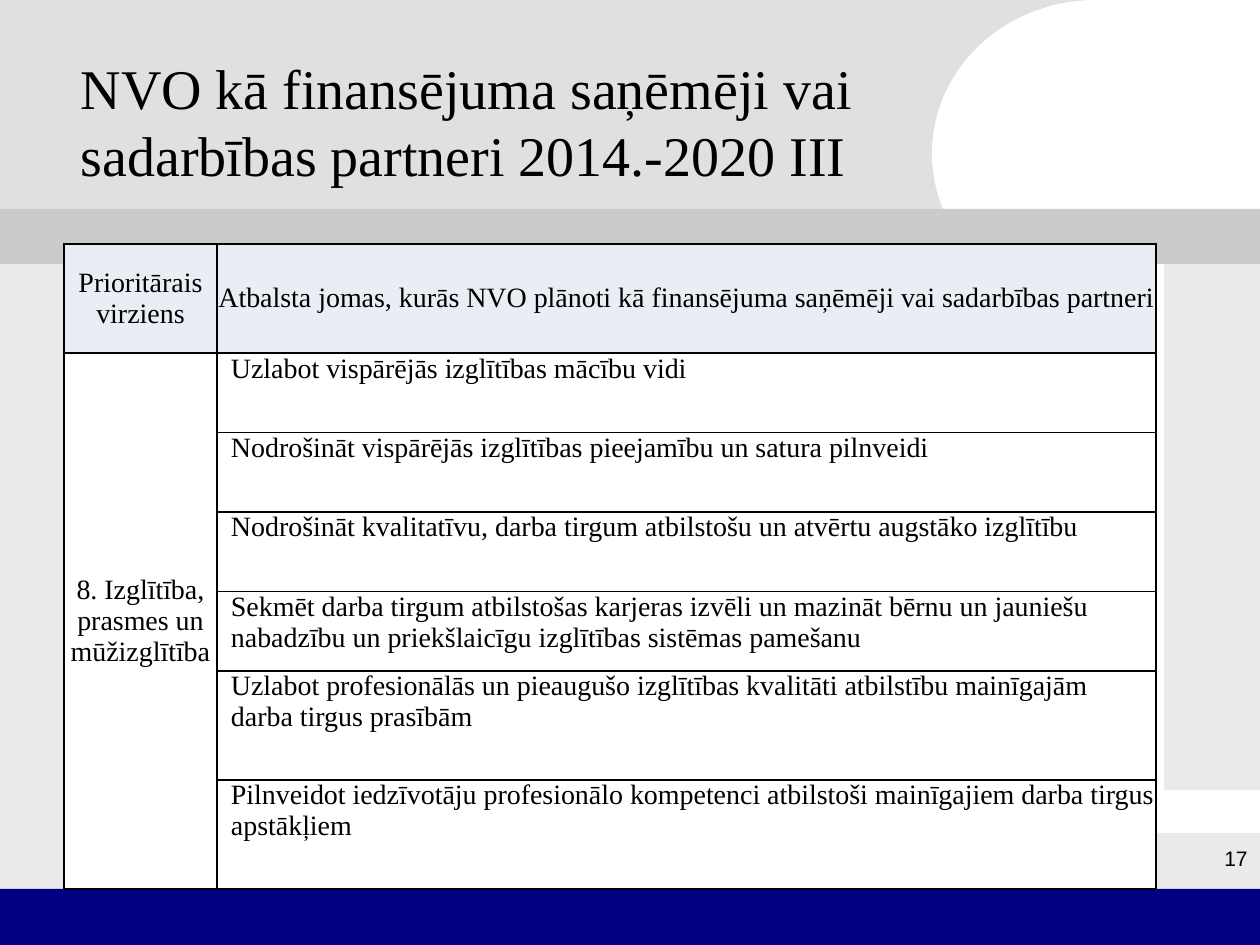
from lxml.etree import SubElement
from pptx import Presentation
from pptx.dml.color import RGBColor
from pptx.enum.shapes import MSO_SHAPE as Shape
from pptx.enum.text import MSO_ANCHOR as Anchor, PP_ALIGN as Align
from pptx.oxml.ns import qn
from pptx.util import Pt

SCALE = 914400 / 126
SERIF = "Times New Roman"

HEADERS = [
    "Prioritārais virziens",
    "Atbalsta jomas, kurās NVO plānoti kā finansējuma saņēmēji vai sadarbības partneri",
]
PRIORITY = "8. Izglītība, prasmes un mūžizglītība"
AREAS = [
    "Uzlabot vispārējās izglītības mācību vidi",
    "Nodrošināt vispārējās izglītības pieejamību un satura pilnveidi",
    "Nodrošināt kvalitatīvu, darba tirgum atbilstošu un atvērtu augstāko izglītību",
    "Sekmēt darba tirgum atbilstošas karjeras izvēli un mazināt bērnu un jauniešu "
    "nabadzību un priekšlaicīgu izglītības sistēmas pamešanu",
    "Uzlabot profesionālās un pieaugušo izglītības kvalitāti atbilstību mainīgajām "
    "darba tirgus prasībām",
    "Pilnveidot iedzīvotāju profesionālo kompetenci atbilstoši mainīgajiem darba "
    "tirgus apstākļiem",
]


def px(length):
    return round(length * SCALE)


def color(value):
    return RGBColor.from_string(value)


def write(frame, text, font, size, align):
    frame.text = text
    para = frame.paragraphs[0]
    para.alignment = align
    para.font.name = font
    para.font.size = Pt(size)
    para.font.color.rgb = color("000000")


def add_block(page, kind, fill, box):
    block = page.shapes.add_shape(kind, *map(px, box))
    block.shadow.inherit = False
    block.fill.solid()
    block.fill.fore_color.rgb = color(fill)
    block.line.fill.background()


def add_backdrop(page, box):
    left, top, width, height = box
    blocks = [
        (Shape.RECTANGLE, "E0E0E0", (0, 0, 1145, 213)),
        (Shape.OVAL, "FFFFFF", (932, 0, width - 932, 307)),
        (Shape.RECTANGLE, "EAEAEA", (0, 264, 70, 625)),
        (Shape.RECTANGLE, "EAEAEA", (33, 833, width - 33, 56)),
        (Shape.RECTANGLE, "000080", (0, 889, width, height - 889)),
        (Shape.RECTANGLE, "EAEAEA", (1164, 264, width - 1164, 526)),
        (Shape.RECTANGLE, "FFFFFF", (1086, 0, width - 1086, 254)),
        (Shape.RECTANGLE, "CBCBCB", (0, 209, width, 55)),
    ]
    for kind, fill, (x, y, wide, high) in blocks:
        add_block(page, kind, fill, (left + x, top + y, wide, high))


def add_title(page, box):
    title = page.shapes.title
    title.left, title.top, title.width, title.height = map(px, box)
    frame = title.text_frame
    frame.word_wrap = True
    frame.vertical_anchor = Anchor.MIDDLE
    write(frame, "NVO kā finansējuma saņēmēji vai sadarbības partneri 2014.-2020 III",
          SERIF, 32, Align.LEFT)
    title.element.getparent().append(title.element)


def add_page_number(page, box):
    frame = page.shapes.add_textbox(*map(px, box)).text_frame
    frame.word_wrap = True
    write(frame, "17", "Arial", 12, Align.RIGHT)


def add_borders(cell):
    props = cell._tc.get_or_add_tcPr()
    for index, side in enumerate(("a:lnL", "a:lnR", "a:lnT", "a:lnB")):
        line = props.makeelement(qn(side), {"w": str(Pt(1))})
        fill = SubElement(line, qn("a:solidFill"))
        SubElement(fill, qn("a:srgbClr"), val="000000")
        props.insert(index, line)


def fill_cell(cell, text, fill="FFFFFF", centered=True):
    cell.margin_left = 0 if centered else px(14)
    cell.margin_right = cell.margin_top = cell.margin_bottom = 0
    cell.vertical_anchor = Anchor.MIDDLE if centered else Anchor.TOP
    write(cell.text_frame, text, SERIF, 16, Align.CENTER if centered else Align.LEFT)
    cell.fill.solid()
    cell.fill.fore_color.rgb = color(fill)


def add_areas_table(page, box):
    left, top, width, height = box
    tall = 109
    short = (height - 3 * tall) / 4
    heights = [tall] + [short] * 4 + [tall] * 2
    widths = [153, width - 153]
    table = page.shapes.add_table(len(heights), len(widths), *map(px, box)).table
    for row, high in zip(table.rows, heights):
        row.height = px(high)
    for column, wide in zip(table.columns, widths):
        column.width = px(wide)
    for index, text in enumerate(HEADERS):
        fill_cell(table.cell(0, index), text, "E9EDF4")
    table.cell(1, 0).merge(table.cell(len(AREAS), 0))
    fill_cell(table.cell(1, 0), PRIORITY)
    for index, text in enumerate(AREAS, 1):
        fill_cell(table.cell(index, 1), text, centered=False)
    for cell in table.iter_cells():
        add_borders(cell)


def main():
    deck = Presentation()
    deck.slide_width, deck.slide_height = px(1260), px(945)
    page = deck.slides.add_slide(deck.slide_layouts[5])
    add_backdrop(page, (0, 0, 1260, 945))
    add_title(page, (68, 42, 932, 158))
    add_page_number(page, (975, 839, 285, 63))
    add_areas_table(page, (64, 244, 1092, 645))
    deck.save("out.pptx")


if __name__ == "__main__":
    main()
